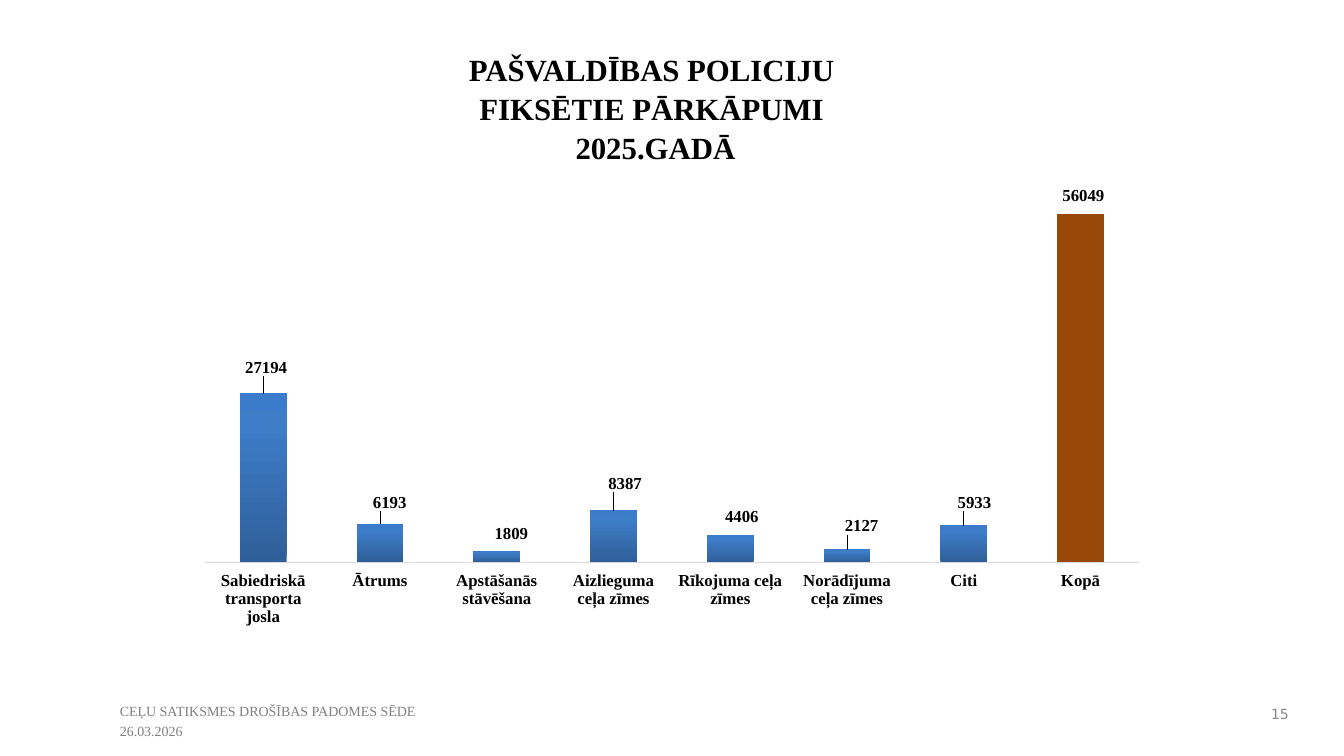
from copy import deepcopy

from lxml import etree
from pptx import Presentation
from pptx.chart.data import CategoryChartData
from pptx.dml.color import RGBColor
from pptx.enum.chart import XL_CHART_TYPE, XL_LABEL_POSITION, XL_TICK_LABEL_POSITION, XL_TICK_MARK
from pptx.enum.text import MSO_ANCHOR, PP_ALIGN
from pptx.oxml.ns import qn
from pptx.util import Inches, Pt

SERIF = "Times New Roman"
VIOLATIONS = [
    ("Sabiedriskā transporta josla", 27194, 0.003, -0.027),
    ("Ātrums", 6193, 0.01, -0.017),
    ("Apstāšanās stāvēšana", 1809, 0.015, -0.01),
    ("Aizlieguma ceļa zīmes", 8387, 0.012, -0.029),
    ("Rīkojuma ceļa zīmes", 4406, 0.012, -0.012),
    ("Norādījuma ceļa zīmes", 2127, 0.015, -0.021),
    ("Citi", 5933, 0.011, -0.021),
    ("Kopā", 56049, 0.003, -0.012),
]
BAR_STOPS = [(0, "2F5F99"), (0.8, "3D7CC7"), (1, "3A7CCB")]


def rgb(value):
    return RGBColor.from_string(value)


def style_font(font, size, color, bold=False, name=SERIF):
    font.name = name
    font.size = Pt(size)
    font.bold = bold
    font.color.rgb = rgb(color)


def add_text(slide, box, lines, size, color, bold=False, name=SERIF,
             align=PP_ALIGN.LEFT, anchor=MSO_ANCHOR.TOP, spacing=1.0, gap=0):
    frame = slide.shapes.add_textbox(*map(Inches, box)).text_frame
    frame.word_wrap = True
    frame.vertical_anchor = anchor
    for index, line in enumerate(lines):
        paragraph = frame.add_paragraph() if index else frame.paragraphs[0]
        paragraph.text = line
        paragraph.alignment = align
        paragraph.line_spacing = spacing
        if index:
            paragraph.space_before = Pt(gap)
        for run in paragraph.runs:
            style_font(run.font, size, color, bold, name)


def manual_layout(**settings):
    layout = etree.Element(qn("c:layout"))
    manual = etree.SubElement(layout, qn("c:manualLayout"))
    for key, value in settings.items():
        etree.SubElement(manual, qn(f"c:{key}")).set("val", str(value))
    return layout


def fill_bars(series):
    fill = series.format.fill
    fill.gradient()
    fill.gradient_angle = 90
    stop_list = next(series._element.iter(qn("a:gsLst")))
    stop_list.append(deepcopy(stop_list[-1]))
    for stop, (position, color) in zip(fill.gradient_stops, BAR_STOPS):
        stop.position = position
        stop.color.rgb = rgb(color)
    total_fill = series.points[len(VIOLATIONS) - 1].format.fill
    total_fill.solid()
    total_fill.fore_color.rgb = rgb("984807")


def place_labels(series):
    labels = series.data_labels
    labels.show_value = True
    style_font(labels.font, 12, "000000", True)
    for index, (_, _, shift_x, shift_y) in enumerate(VIOLATIONS):
        label = series.points[index].data_label
        style_font(label.font, 12, "000000", True)
        label.position = XL_LABEL_POSITION.OUTSIDE_END
    for element, (_, _, shift_x, shift_y) in zip(series._element.iter(qn("c:dLbl")), VIOLATIONS):
        element.insert(1, manual_layout(x=shift_x, y=shift_y))


def add_violations_chart(slide, box):
    data = CategoryChartData()
    data.categories = [name for name, *_ in VIOLATIONS]
    data.add_series("Series 1", [count for _, count, *_ in VIOLATIONS])
    chart = slide.shapes.add_chart(
        XL_CHART_TYPE.COLUMN_CLUSTERED, *map(Inches, box), data).chart
    chart.has_legend = False
    chart.has_title = False
    style_font(chart.font, 10, "000000")

    categories = chart.category_axis
    categories.major_tick_mark = XL_TICK_MARK.NONE
    categories.tick_label_position = XL_TICK_LABEL_POSITION.LOW
    categories.format.line.color.rgb = rgb("D9D9D9")
    categories.format.line.width = Pt(1)
    style_font(categories.tick_labels.font, 12, "000000", True)

    values = chart.value_axis
    values.minimum_scale = 0
    values.maximum_scale = 60000
    values.has_major_gridlines = False
    values.visible = False

    plot = chart.plots[0]
    plot.gap_width = 150
    plot.vary_by_categories = False
    fill_bars(plot.series[0])
    place_labels(plot.series[0])

    plot_area = next(chart._chartSpace.iter(qn("c:plotArea")))
    for old in plot_area.findall(qn("c:layout")):
        plot_area.remove(old)
    plot_area.insert(0, manual_layout(
        layoutTarget="inner", xMode="edge", yMode="edge",
        x=0.019, y=0.038, w=0.962, h=0.777))


def add_title(slide, box):
    title = "PAŠVALDĪBAS POLICIJU \vFIKSĒTIE PĀRKĀPUMI \v2025.GADĀ"
    add_text(slide, box, [title], 22, "000000", bold=True,
             align=PP_ALIGN.CENTER, anchor=MSO_ANCHOR.MIDDLE, spacing=1.05)


def add_footer(slide, box):
    left, top, width, height = box
    number_width = 0.44
    meeting_width = width - number_width - 0.1
    add_text(slide, (left, top, meeting_width, 0.26),
             ["CEĻU SATIKSMES DROŠĪBAS PADOMES SĒDE", "26.03.2026"],
             10, "808080", gap=2)
    add_text(slide, (left + width - number_width, top, number_width, height), ["15"],
             10, "898989", name="DejaVu Sans", align=PP_ALIGN.RIGHT,
             anchor=MSO_ANCHOR.MIDDLE)


def main():
    deck = Presentation()
    deck.slide_width = Inches(13.33)
    deck.slide_height = Inches(7.5)
    slide = deck.slides.add_slide(deck.slide_layouts[6])
    add_violations_chart(slide, (1.85, 1.7, 9.63, 4.76))
    add_title(slide, (2.96, 0.43, 7.08, 1.27))
    add_footer(slide, (1.09, 6.92, 11.79, 0.33))
    deck.save("out.pptx")


if __name__ == "__main__":
    main()
